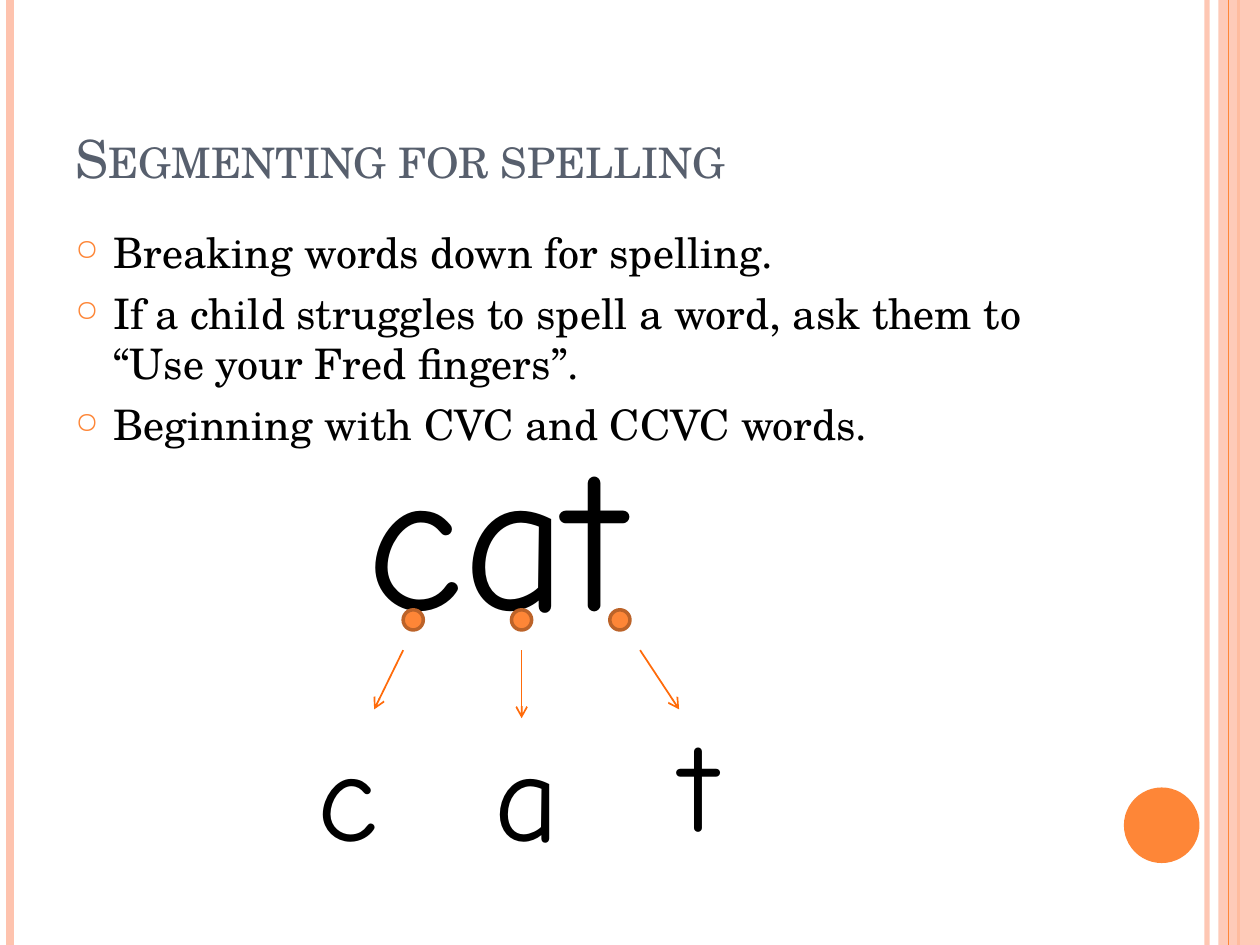
from lxml.etree import SubElement
from pptx import Presentation
from pptx.dml.color import RGBColor
from pptx.enum.shapes import MSO_CONNECTOR as Connector, MSO_SHAPE as Shape
from pptx.enum.text import MSO_ANCHOR as Anchor, MSO_AUTO_SIZE as AutoSize
from pptx.oxml.ns import qn
from pptx.util import Inches, Pt

SLIDE_W, SLIDE_H = Inches(10), Inches(7.5)
COLUMNS, ROWS = 100, 75
ORANGE = RGBColor(0xFE, 0x86, 0x37)
PEACH = RGBColor(0xFE, 0xC3, 0xAE)
DARK_ORANGE = RGBColor(0xBC, 0x63, 0x29)
ARROW_ORANGE = RGBColor(0xFF, 0x6B, 0x0A)
SLATE = RGBColor(0x57, 0x5F, 0x6D)
BLACK = RGBColor(0, 0, 0)
SERIF, HANDWRITING = "TeX Gyre Schola", "Comic Neue"

BULLETS = [
    "Breaking words down for spelling.",
    "If a child struggles to spell a word, ask them to “Use your Fred fingers”.",
    "Beginning with CVC and CCVC words.",
]


def col(count):
    return round(SLIDE_W * count / COLUMNS)


def row(count):
    return round(SLIDE_H * count / ROWS)


def add_child(parent, tag, **attributes):
    return SubElement(parent, qn(tag), attributes)


def set_opacity(owner, percent):
    for color in owner.iter(qn("a:srgbClr")):
        add_child(color, "a:alpha", val=str(percent * 1000))


def add_bullet(paragraph):
    paragraph.space_before = Pt(6)
    properties = paragraph._p.get_or_add_pPr()
    properties.set("marL", str(col(3)))
    properties.set("indent", str(-col(3)))
    color = add_child(properties, "a:buClr")
    add_child(color, "a:srgbClr", val=str(ORANGE))
    add_child(properties, "a:buSzPct", val="70000")
    add_child(properties, "a:buChar", char="○")


def add_text(slide, lines, left, top, width, height, size, font=SERIF, color=BLACK,
             anchor=Anchor.TOP, wrap=True, grow=False, small_caps=False, bullets=False):
    box = slide.shapes.add_textbox(col(left), row(top), col(width), row(height))
    frame = box.text_frame
    frame.word_wrap = wrap
    frame.auto_size = AutoSize.SHAPE_TO_FIT_TEXT if grow else AutoSize.NONE
    frame.vertical_anchor = anchor
    frame.text = "\n".join(lines)
    for paragraph in frame.paragraphs:
        if bullets:
            add_bullet(paragraph)
        run = paragraph.runs[0]
        run.font.name, run.font.size = font, Pt(size)
        run.font.color.rgb = color
        if small_caps:
            run.font._element.set("cap", "small")


def add_solid(slide, kind, left, top, width, height, fill, outline=None, opacity=100):
    solid = slide.shapes.add_shape(kind, col(left), row(top), col(width), row(height))
    solid.shadow.inherit = False
    solid.fill.solid()
    solid.fill.fore_color.rgb = fill
    if outline:
        solid.line.color.rgb, solid.line.width = outline, Pt(2)
    else:
        solid.line.fill.background()
    if opacity < 100:
        set_opacity(solid._element.spPr, opacity)


def add_line(slide, start, end, color, width, arrow=False, opacity=100):
    line = slide.shapes.add_connector(
        Connector.STRAIGHT, col(start[0]), row(start[1]), col(end[0]), row(end[1]))
    line.line.color.rgb, line.line.width = color, Pt(width)
    if opacity < 100:
        set_opacity(line._element.spPr, opacity)
    if arrow:
        add_child(line.line._get_or_add_ln(), "a:tailEnd", type="arrow")
    add_child(line._element.spPr, "a:effectLst")


def add_stripe(slide, x, color, width, opacity=100):
    add_line(slide, (x, 0), (x, ROWS), color, width, opacity=opacity)


def add_decoration(slide):
    add_stripe(slide, 95.8, PEACH, 3, opacity=93)
    add_stripe(slide, 0.8, PEACH, 4.5)
    add_stripe(slide, 98.3, ORANGE, 1.5)
    add_solid(slide, Shape.RECTANGLE, 96.7, 0, 3.3, ROWS, PEACH, opacity=87)
    add_stripe(slide, 97.5, ORANGE, 0.75)
    add_solid(slide, Shape.OVAL, 89.2, 62.5, 6, 6, ORANGE)


def add_segmented_word(slide):
    add_text(slide, ["cat"], 28.1, 32, 40.6, 20.4, 115, font=HANDWRITING, grow=True)
    for dot_left in (32, 40.6, 48.4):
        add_solid(slide, Shape.OVAL, dot_left, 48.4, 1.6, 1.6, ORANGE, outline=DARK_ORANGE)
    for start_x, end_x, end_y in ((32, 29.7, 56.3), (41.4, 41.4, 57), (50.8, 53.9, 56.3)):
        add_line(slide, (start_x, 51.6), (end_x, end_y), ARROW_ORANGE, 1, arrow=True)
    for letter, left, top, width in (
            ("c", 24.2, 56.3, 7.2), ("a", 38.3, 56.3, 7.2), ("t", 53.1, 55.5, 6.8)):
        add_text(slide, [letter], left, top, width, 13.1, 72,
                 font=HANDWRITING, wrap=False, grow=True)


def main():
    deck = Presentation()
    deck.slide_width, deck.slide_height = SLIDE_W, SLIDE_H
    slide = deck.slides.add_slide(deck.slide_layouts[6])
    add_decoration(slide)
    add_text(slide, ["Segmenting for spelling"], 5, 3, 81.7, 12.5, 30,
             color=SLATE, anchor=Anchor.BOTTOM, small_caps=True)
    add_text(slide, BULLETS, 5, 17.5, 81.7, 53.3, 24, bullets=True)
    add_segmented_word(slide)
    deck.save("out.pptx")


if __name__ == "__main__":
    main()
